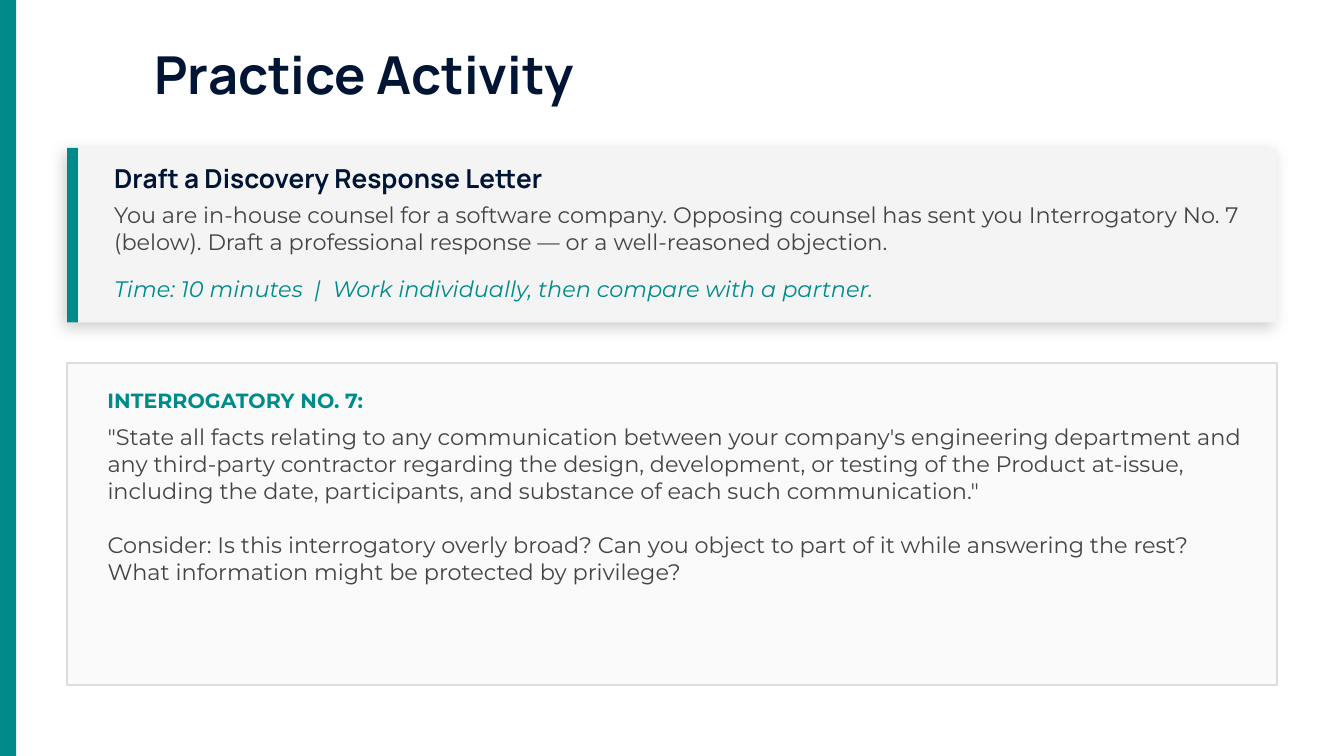
from collections import namedtuple

from lxml import etree
from pptx import Presentation
from pptx import util as u
from pptx.dml.color import RGBColor
from pptx.enum import shapes, text
from pptx.oxml import ns

TEAL = RGBColor(0x00, 0x8B, 0x8B)
NAVY = RGBColor(0x00, 0x14, 0x34)
GREY = RGBColor(0x44, 0x44, 0x44)
CARD = RGBColor(0xF4, 0xF4, 0xF4)
PANEL = RGBColor(0xFA, 0xFA, 0xFA)
BORDER = RGBColor(0xDD, 0xDD, 0xDD)
HEAD_FONT, BODY_FONT = "Manrope", "Montserrat"

CELL = u.Inches(0.05)  # the slide is a grid of 200 columns by 112.5 rows
COLS, ROWS = 200, 112.5

Box = namedtuple("Box", "col row cols rows")


def within(box, col, row, cols, rows):
    """Return a box whose column and row count from the corner of another."""
    return Box(box.col + col, box.row + row, cols, rows)


def emu(box):
    return [int(n * CELL) for n in box]


def add_rect(s, box, fill, line=None):
    sp = s.shapes.add_shape(shapes.MSO_SHAPE.RECTANGLE, *emu(box))
    sp.shadow.inherit = False
    sp.fill.solid()
    sp.fill.fore_color.rgb = fill
    if line is None:
        sp.line.fill.background()
    else:
        sp.line.color.rgb = line
        sp.line.width = u.Pt(1)
    return sp


def add_shadow(sp, blur, distance, angle, opacity):
    """Fill the shape's empty effect list with a black outer shadow."""
    effects = sp.element.spPr.find(ns.qn("a:effectLst"))
    shadow = etree.SubElement(
        effects, ns.qn("a:outerShdw"), blurRad=str(u.Pt(blur)),
        dist=str(u.Pt(distance)), dir=str(angle * 60000),
        algn="bl", rotWithShape="0")
    color = etree.SubElement(shadow, ns.qn("a:srgbClr"), val="000000")
    etree.SubElement(color, ns.qn("a:alpha"), val=str(opacity * 1000))


def write(sp, paragraphs, size, color, font=BODY_FONT, bold=False,
          italic=False, anchor=text.MSO_ANCHOR.MIDDLE, gap=0):
    tf = sp.text_frame
    tf.word_wrap = True
    tf.auto_size = text.MSO_AUTO_SIZE.NONE
    tf.vertical_anchor = anchor
    tf.margin_left = tf.margin_top = tf.margin_right = tf.margin_bottom = 0
    for i, words in enumerate(paragraphs):
        p = tf.add_paragraph() if i else tf.paragraphs[0]
        p.alignment = text.PP_ALIGN.LEFT
        p.space_before = u.Pt(gap if i else 0)
        r = p.add_run()
        r.text = words
        r.font.name, r.font.size = font, u.Pt(size)
        r.font.bold, r.font.italic = bold, italic
        r.font.color.rgb = color


def add_text(s, box, paragraphs, size, color, **style):
    write(s.shapes.add_textbox(*emu(box)), paragraphs, size, color, **style)


def add_title(s, box, words):
    sp = s.shapes.title
    sp.left, sp.top, sp.width, sp.height = emu(box)
    write(sp, [words], 28, NAVY, font=HEAD_FONT, bold=True)


def add_task_card(s, box, heading, task, timing):
    add_shadow(add_rect(s, box, CARD), blur=8, distance=3, angle=135,
               opacity=18)
    add_rect(s, within(box, 0, 0, 1.6, box.rows), TEAL)
    cols = box.cols - 12
    add_text(s, within(box, 7, 1, cols, 7), [heading], 14, NAVY,
             font=HEAD_FONT, bold=True)
    add_text(s, within(box, 7, 8, cols, 10), [task], 12, GREY,
             anchor=text.MSO_ANCHOR.TOP)
    add_text(s, within(box, 7, 18, cols, 6), [timing], 12, TEAL, italic=True)


def add_question_panel(s, box, label, paragraphs):
    add_rect(s, box, PANEL, BORDER)
    add_text(s, within(box, 6, 2, 100, 7), [label], 11, TEAL, bold=True)
    add_text(s, within(box, 6, 9, box.cols - 11, box.rows - 12), paragraphs,
             12, GREY, anchor=text.MSO_ANCHOR.TOP, gap=14.5)


def main():
    prs = Presentation()
    prs.slide_width, prs.slide_height = int(COLS * CELL), int(ROWS * CELL)
    s = prs.slides.add_slide(prs.slide_layouts.get_by_name("Title Only"))

    add_rect(s, Box(0, 0, 2.4, ROWS), TEAL)
    add_title(s, Box(23, 6, 100, 10), "Practice Activity")
    add_task_card(
        s, Box(10, 22, 180, 26),
        "Draft a Discovery Response Letter",
        "You are in-house counsel for a software company. Opposing counsel "
        "has sent you Interrogatory No. 7 (below). Draft a professional "
        "response — or a well-reasoned objection.",
        "Time: 10 minutes  |  Work individually, then compare with a partner.")
    add_question_panel(
        s, Box(10, 54, 180, 48),
        "INTERROGATORY NO. 7:",
        ['"State all facts relating to any communication between your '
         "company's engineering department and any third-party contractor "
         "regarding the design, development, or testing of the Product "
         "at-issue, including the date, participants, and substance of each "
         'such communication."',
         "Consider: Is this interrogatory overly broad? Can you object to "
         "part of it while answering the rest? What information might be "
         "protected by privilege?"])

    prs.save("out.pptx")


if __name__ == "__main__":
    main()
